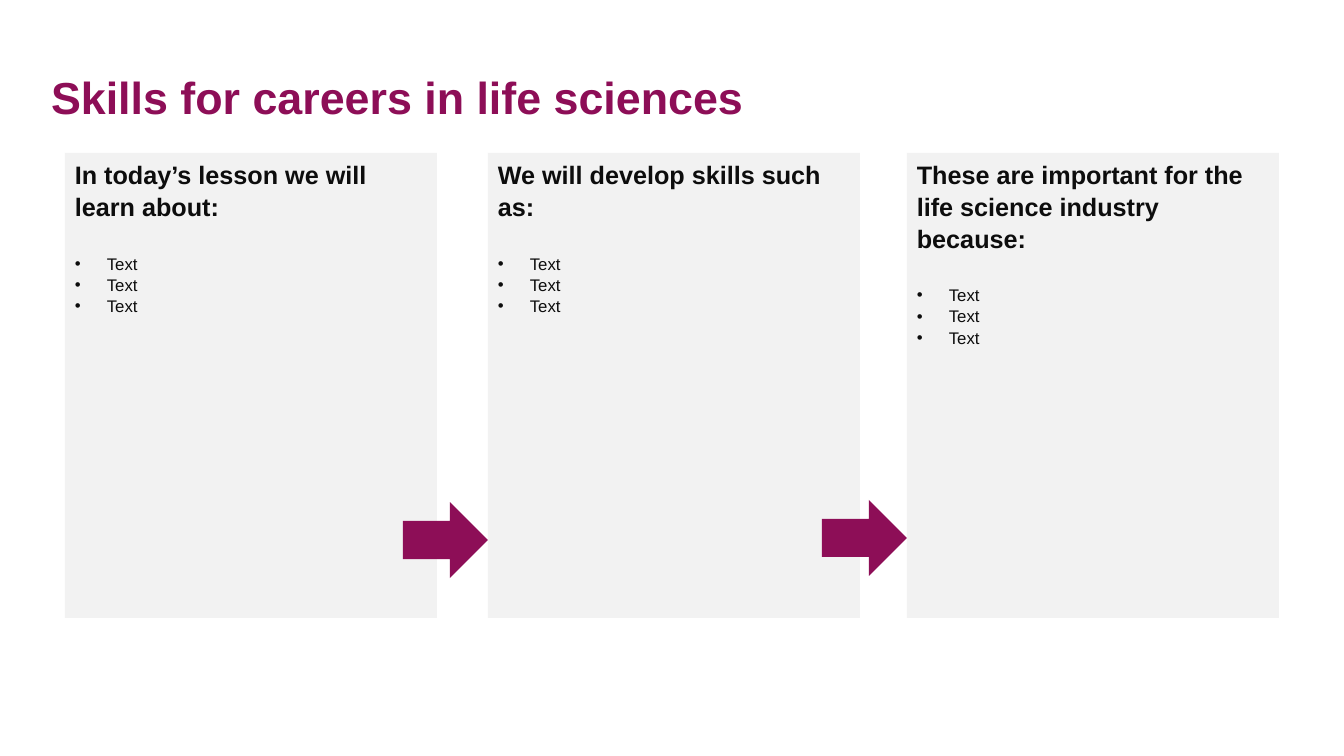
"""Build the life sciences skills slide with three linked panels."""
import pptx
import pptx.util
from lxml import etree
from pptx.dml.color import RGBColor
from pptx.enum.shapes import MSO_SHAPE
from pptx.enum.text import MSO_ANCHOR, PP_ALIGN
from pptx.oxml.ns import qn

EMU_PER_PX = 914400 / 100.8
PLUM = RGBColor(0x8D, 0x0E, 0x57)
PALE_GREY = RGBColor(0xF2, 0xF2, 0xF2)
NEAR_BLACK = RGBColor(0x0D, 0x0D, 0x0D)
FONT_NAME = "Arial"

PANEL_TOP, PANEL_WIDTH, PANEL_HEIGHT = 153, 372, 465
ARROW_WIDTH, ARROW_HEIGHT = 85, 76
BULLET_INDENT = 32
BULLETS = ["Text"] * 3
PANELS = [
    (65, "In today’s lesson we will learn about:"),
    (488, "We will develop skills such as:"),
    (907, "These are important for the life science industry because:"),
]
ARROW_TOPS = [502, 500]


def px(length):
    """Turn a length in pixels into EMU."""
    return pptx.util.Emu(round(length * EMU_PER_PX))


def format_runs(paragraph, size, color, bold):
    """Set the font of every run in a paragraph."""
    for run in paragraph.runs:
        run.font.name = FONT_NAME
        run.font.size = pptx.util.Pt(size)
        run.font.bold = bold
        run.font.color.rgb = color


def add_bullet(paragraph):
    """Give a paragraph a hanging bullet."""
    properties = paragraph._p.get_or_add_pPr()
    properties.set("marL", str(px(BULLET_INDENT)))
    properties.set("indent", str(-px(BULLET_INDENT)))
    etree.SubElement(properties, qn("a:buFont"), typeface=FONT_NAME)
    etree.SubElement(properties, qn("a:buChar"), char="•")


def add_filled_shape(slide, kind, left, top, width, height, color):
    """Add a flat shape without outline or shadow."""
    shape = slide.shapes.add_shape(kind, px(left), px(top), px(width), px(height))
    shape.shadow.inherit = False
    shape.fill.solid()
    shape.fill.fore_color.rgb = color
    shape.line.fill.background()
    return shape


def add_title(slide, text):
    """Place and format the slide title."""
    title = slide.shapes.title
    title.left, title.top, title.width, title.height = px(41), px(27), px(1183), px(146)
    text_frame = title.text_frame
    text_frame.text = text
    text_frame.word_wrap = True
    text_frame.vertical_anchor = MSO_ANCHOR.MIDDLE
    paragraph = text_frame.paragraphs[0]
    paragraph.alignment = PP_ALIGN.LEFT
    paragraph.line_spacing = 0.9
    format_runs(paragraph, 32, PLUM, True)


def add_panel(slide, left, heading, bullets):
    """Add a grey panel with a heading and a bullet list."""
    panel = add_filled_shape(slide, MSO_SHAPE.RECTANGLE, left, PANEL_TOP,
                             PANEL_WIDTH, PANEL_HEIGHT, PALE_GREY)
    text_frame = panel.text_frame
    text_frame.word_wrap = True
    text_frame.vertical_anchor = MSO_ANCHOR.TOP
    text_frame.text = "\n".join([heading, *bullets])
    heading_paragraph, *bullet_paragraphs = text_frame.paragraphs
    format_runs(heading_paragraph, 18, NEAR_BLACK, True)
    for paragraph in bullet_paragraphs:
        add_bullet(paragraph)
        format_runs(paragraph, 12, NEAR_BLACK, False)
    for paragraph in text_frame.paragraphs:
        paragraph.alignment = PP_ALIGN.LEFT
        paragraph.line_spacing = 1.05
    bullet_paragraphs[0].space_before = pptx.util.Pt(22)


def main():
    """Build and save the presentation."""
    presentation = pptx.Presentation()
    presentation.slide_width, presentation.slide_height = px(1344), px(756)
    slide = presentation.slides.add_slide(presentation.slide_layouts[5])
    add_title(slide, "Skills for careers in life sciences")
    for left, heading in PANELS:
        add_panel(slide, left, heading, BULLETS)
    for (next_left, _), top in zip(PANELS[1:], ARROW_TOPS):
        add_filled_shape(slide, MSO_SHAPE.RIGHT_ARROW, next_left - ARROW_WIDTH, top,
                         ARROW_WIDTH, ARROW_HEIGHT, PLUM)
    presentation.save("out.pptx")


if __name__ == "__main__":
    main()
